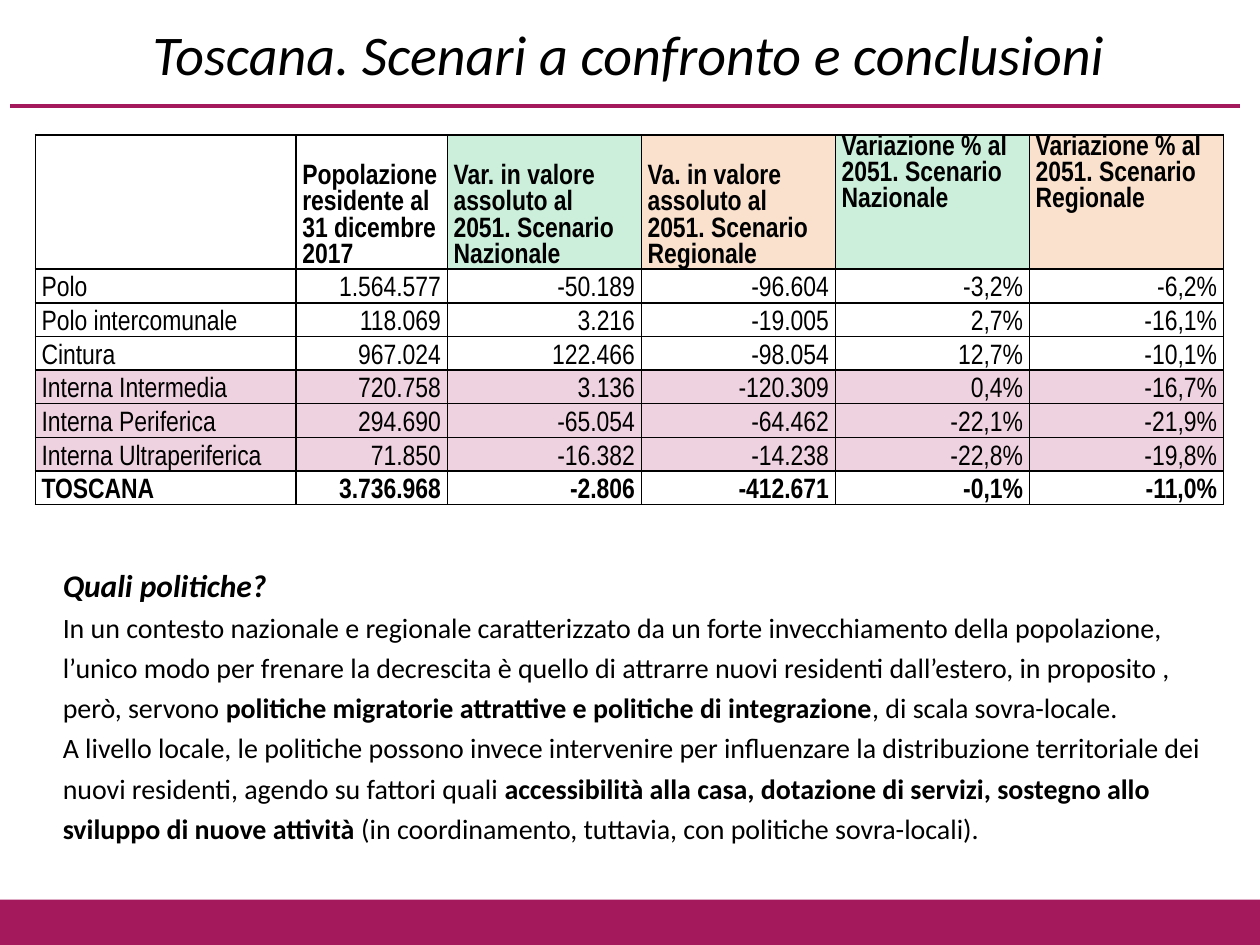
"""Build the slide comparing the population scenarios for Toscana."""
from lxml import etree
from pptx import Presentation
from pptx import util as u
from pptx.dml.color import RGBColor
from pptx.enum import shapes, text
from pptx.oxml.ns import qn

BLACK = RGBColor(0x00, 0x00, 0x00)
MAGENTA = RGBColor(0xA3, 0x19, 0x5B)
PINK = RGBColor(0xB1, 0x1F, 0x61)
GREEN = RGBColor(0x00, 0xB0, 0x50)
ORANGE = RGBColor(0xE4, 0x6C, 0x0A)

TITLE_FONT = {"name": "Calibri", "size": u.Pt(32), "italic": True}
HEADING_FONT = {"name": "Calibri", "size": u.Pt(18), "bold": True, "italic": True}
BODY_FONT = {"name": "Calibri", "size": u.Pt(16), "bold": False}
BOLD_FONT = {**BODY_FONT, "bold": True}
TABLE_FONT = {"name": "Arial Narrow", "size": u.Pt(16)}

COLUMN_WIDTHS = [2.07, 1.2] + [1.54] * 4
HEADER_HEIGHT, ROW_HEIGHT = 0.87, 0.21
HEADER_FILLS = [None, None, GREEN, ORANGE, GREEN, ORANGE]
ROWS = [
    ["", "Popolazione residente al 31 dicembre 2017",
     "Var. in valore assoluto al 2051. Scenario Nazionale",
     "Va. in valore assoluto al 2051. Scenario Regionale",
     "Variazione % al 2051. Scenario Nazionale",
     "Variazione % al 2051. Scenario Regionale"],
    ["Polo", "1.564.577", "-50.189", "-96.604", "-3,2%", "-6,2%"],
    ["Polo intercomunale", "118.069", "3.216", "-19.005", "2,7%", "-16,1%"],
    ["Cintura", "967.024", "122.466", "-98.054", "12,7%", "-10,1%"],
    ["Interna Intermedia", "720.758", "3.136", "-120.309", "0,4%", "-16,7%"],
    ["Interna Periferica", "294.690", "-65.054", "-64.462", "-22,1%", "-21,9%"],
    ["Interna Ultraperiferica", "71.850", "-16.382", "-14.238", "-22,8%", "-19,8%"],
    ["TOSCANA", "3.736.968", "-2.806", "-412.671", "-0,1%", "-11,0%"],
]
POLICIES = [
    [("Quali politiche?", HEADING_FONT)],
    [("In un contesto nazionale e regionale caratterizzato da un forte invecchiamento "
      "della popolazione, l’unico modo per frenare la decrescita è quello di attrarre "
      "nuovi residenti dall’estero, in proposito , però, servono ", BODY_FONT),
     ("politiche migratorie attrattive e politiche di integrazione", BOLD_FONT),
     (", di scala sovra-locale.", BODY_FONT)],
    [("A livello locale, le politiche possono invece intervenire per influenzare la "
      "distribuzione territoriale dei nuovi residenti, agendo su fattori quali ", BODY_FONT),
     ("accessibilità alla casa, dotazione di servizi, sostegno allo sviluppo di nuove "
      "attività", BOLD_FONT),
     (" (in coordinamento, tuttavia, con politiche sovra-locali).", BODY_FONT)],
]


def add_run(paragraph, content, font_values):
    run = paragraph.add_run()
    run.text = content
    run.font.color.rgb = BLACK
    for name, value in font_values.items():
        setattr(run.font, name, value)


def style_cell(cell, color):
    properties = cell._tc.get_or_add_tcPr()
    for side in ("a:lnL", "a:lnR", "a:lnT", "a:lnB"):
        border = etree.SubElement(properties, qn(side), w=str(u.Pt(1)))
        solid = etree.SubElement(border, qn("a:solidFill"))
        etree.SubElement(solid, qn("a:srgbClr"), val=str(BLACK))
    if color is None:
        cell.fill.background()
    else:
        cell.fill.solid()
        cell.fill.fore_color.rgb = color
        tint = properties.find(qn("a:solidFill")).find(qn("a:srgbClr"))
        etree.SubElement(tint, qn("a:alpha"), val="20000")


presentation = Presentation()
presentation.slide_width = u.Inches(10)
presentation.slide_height = u.Inches(7.5)
slide = presentation.slides.add_slide(presentation.slide_layouts[6])

rule = slide.shapes.add_connector(
    shapes.MSO_CONNECTOR.STRAIGHT,
    u.Inches(0.08), u.Inches(0.84), u.Inches(9.84), u.Inches(0.84))
rule.line.color.rgb = MAGENTA
rule.line.width = u.Pt(2.5)
etree.SubElement(rule._element.spPr, qn("a:effectLst"))

footer = slide.shapes.add_shape(
    shapes.MSO_SHAPE.RECTANGLE,
    u.Inches(0), u.Inches(7.14), u.Inches(10), u.Inches(0.39))
footer.shadow.inherit = False
footer.fill.solid()
footer.fill.fore_color.rgb = MAGENTA
footer.line.fill.background()

title = slide.shapes.add_textbox(
    u.Inches(0.49), u.Inches(-0.03), u.Inches(9), u.Inches(0.99))
title.text_frame.word_wrap = True
title.text_frame.vertical_anchor = text.MSO_ANCHOR.MIDDLE
paragraph = title.text_frame.paragraphs[0]
paragraph.alignment = text.PP_ALIGN.CENTER
paragraph.line_spacing = 0.85
add_run(paragraph, "Toscana. Scenari a confronto e conclusioni", TITLE_FONT)

table = slide.shapes.add_table(
    len(ROWS), len(COLUMN_WIDTHS), u.Inches(0.28), u.Inches(1.07),
    u.Inches(sum(COLUMN_WIDTHS)),
    u.Inches(HEADER_HEIGHT + ROW_HEIGHT * (len(ROWS) - 1))).table
table.first_row = table.horz_banding = False
for column, width in zip(table.columns, COLUMN_WIDTHS):
    column.width = u.Inches(width)

cell_format = {"margin_left": u.Inches(0.05), "margin_right": u.Inches(0.05),
               "margin_top": 0, "margin_bottom": 0,
               "vertical_anchor": text.MSO_ANCHOR.BOTTOM}
for row_index, values in enumerate(ROWS):
    is_header = row_index == 0
    is_bold = row_index in (0, len(ROWS) - 1)
    table.rows[row_index].height = u.Inches(HEADER_HEIGHT if is_header else ROW_HEIGHT)
    for column_index, value in enumerate(values):
        cell = table.cell(row_index, column_index)
        for name, setting in cell_format.items():
            setattr(cell, name, setting)
        if is_header and column_index >= 4:
            cell.vertical_anchor = text.MSO_ANCHOR.TOP
        if is_header:
            color = HEADER_FILLS[column_index]
        else:
            color = PINK if value and values[0].startswith("Interna") else None
        style_cell(cell, color)
        paragraph = cell.text_frame.paragraphs[0]
        if column_index and not is_header:
            paragraph.alignment = text.PP_ALIGN.RIGHT
        if value:
            add_run(paragraph, value, {**TABLE_FONT, "bold": is_bold})

policies = slide.shapes.add_textbox(
    u.Inches(0.2), u.Inches(4.38), u.Inches(9.53), u.Inches(2.44))
policies.text_frame.word_wrap = True
for index, runs in enumerate(POLICIES):
    frame = policies.text_frame
    paragraph = frame.add_paragraph() if index else frame.paragraphs[0]
    paragraph.line_spacing = 1.2
    paragraph._p.get_or_add_pPr().set("marL", str(u.Inches(0.2)))
    for content, font_values in runs:
        add_run(paragraph, content, font_values)

presentation.save("out.pptx")
